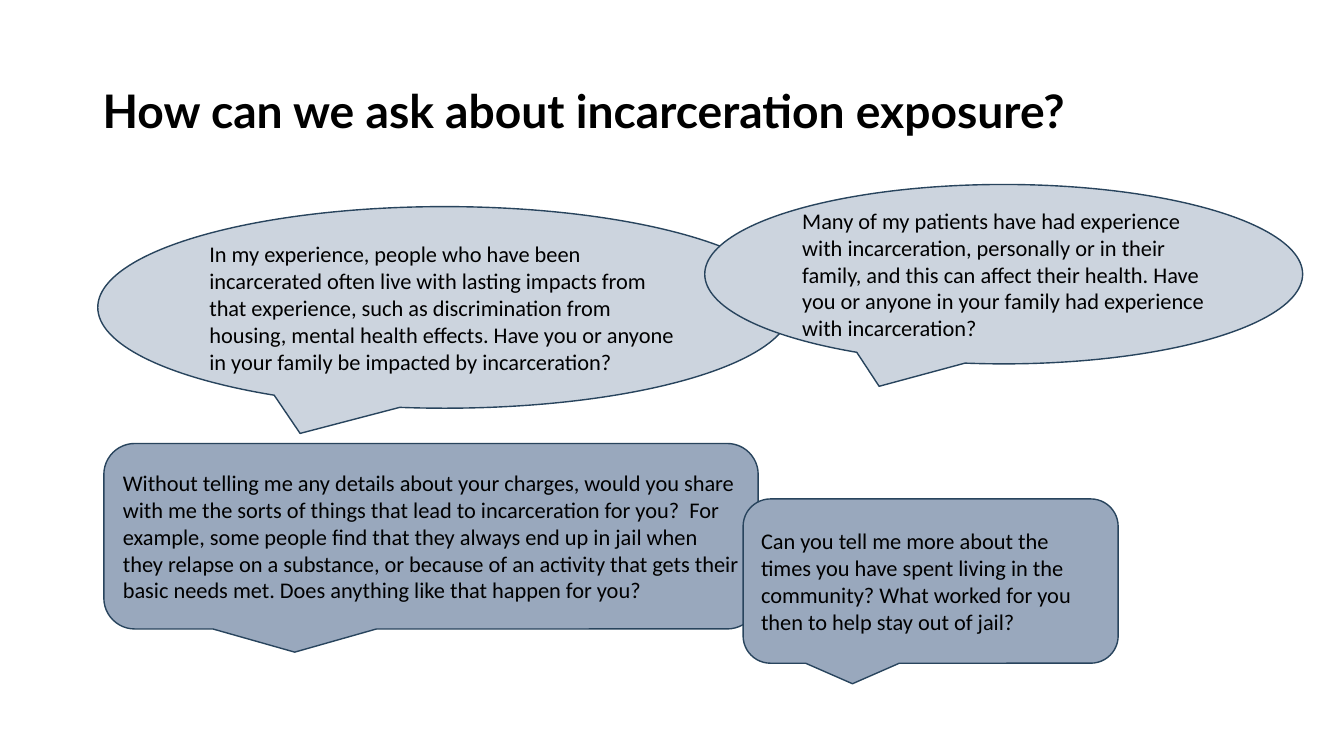
import pptx
import pptx.dml.color
import pptx.enum.shapes
import pptx.enum.text
import pptx.util

SHAPES = pptx.enum.shapes.MSO_SHAPE
PX = 9144
LIGHT, DARK = "CCD4DE", "99A8BD"
TITLE = "How can we ask about incarceration exposure?"
CALLOUTS = [
    (SHAPES.OVAL_CALLOUT, LIGHT, (97, 205, 688, 200),
     "In my experience, people who have been incarcerated often live with lasting impacts "
     "from that experience, such as discrimination from housing, mental health effects. "
     "Have you or anyone in your family be impacted by incarceration?"),
    (SHAPES.OVAL_CALLOUT, LIGHT, (699, 183, 593, 178),
     "Many of my patients have had experience with incarceration, personally or in their "
     "family, and this can affect their health. Have you or anyone in your family had "
     "experience with incarceration?"),
    (SHAPES.ROUNDED_RECTANGULAR_CALLOUT, DARK, (103, 440, 649, 184),
     "Without telling me any details about your charges, would you share with me the sorts "
     "of things that lead to incarceration for you?  For example, some people find that "
     "they always end up in jail when they relapse on a substance, or because of an "
     "activity that gets their basic needs met. Does anything like that happen for you?"),
    (SHAPES.ROUNDED_RECTANGULAR_CALLOUT, DARK, (737, 495, 372, 163),
     "Can you tell me more about the times you have spent living in the community? "
     "What worked for you then to help stay out of jail?"),
]


def color(value):
    """Return the colour of a hex string."""
    return pptx.dml.color.RGBColor.from_string(value)


class SlideBuilder:
    """Holds the slide and its style, and adds elements measured in px."""

    text_color = "000000"
    line_color = "28445D"
    title_font = "Lato"
    body_font = "Calibri"

    def __init__(self, slide):
        """Keep the slide to draw on."""
        self.slide = slide

    def add_text(self, shape, text, font, size, bold=False, line_spacing=1.0):
        """Add one left-aligned paragraph, centred vertically in the shape."""
        frame = shape.text_frame
        frame.word_wrap = True
        frame.vertical_anchor = pptx.enum.text.MSO_ANCHOR.MIDDLE
        paragraph = frame.paragraphs[0]
        paragraph.alignment = pptx.enum.text.PP_ALIGN.LEFT
        paragraph.line_spacing = line_spacing
        run = paragraph.add_run()
        run.text = text
        run.font.name = font
        run.font.size = pptx.util.Pt(size)
        run.font.bold = bold
        run.font.color.rgb = color(self.text_color)

    def title(self, text, box):
        """Add the slide title."""
        shape = self.slide.shapes.add_textbox(*(length * PX for length in box))
        self.add_text(shape, text, self.title_font, 33, bold=True, line_spacing=0.9)

    def callout(self, kind, fill, box, text):
        """Add a speech bubble with its text."""
        shape = self.slide.shapes.add_shape(kind, *(length * PX for length in box))
        shape.shadow.inherit = False
        shape.fill.solid()
        shape.fill.fore_color.rgb = color(fill)
        shape.line.color.rgb = color(self.line_color)
        shape.line.width = pptx.util.Pt(1)
        self.add_text(shape, text, self.body_font, 16)


def main():
    """Build and save the presentation."""
    presentation = pptx.Presentation()
    presentation.slide_width = 1333 * PX
    presentation.slide_height = 750 * PX
    builder = SlideBuilder(presentation.slides.add_slide(presentation.slide_layouts[6]))
    builder.title(TITLE, (92, 40, 1150, 145))
    for callout in CALLOUTS:
        builder.callout(*callout)
    presentation.save("out.pptx")


if __name__ == "__main__":
    main()
